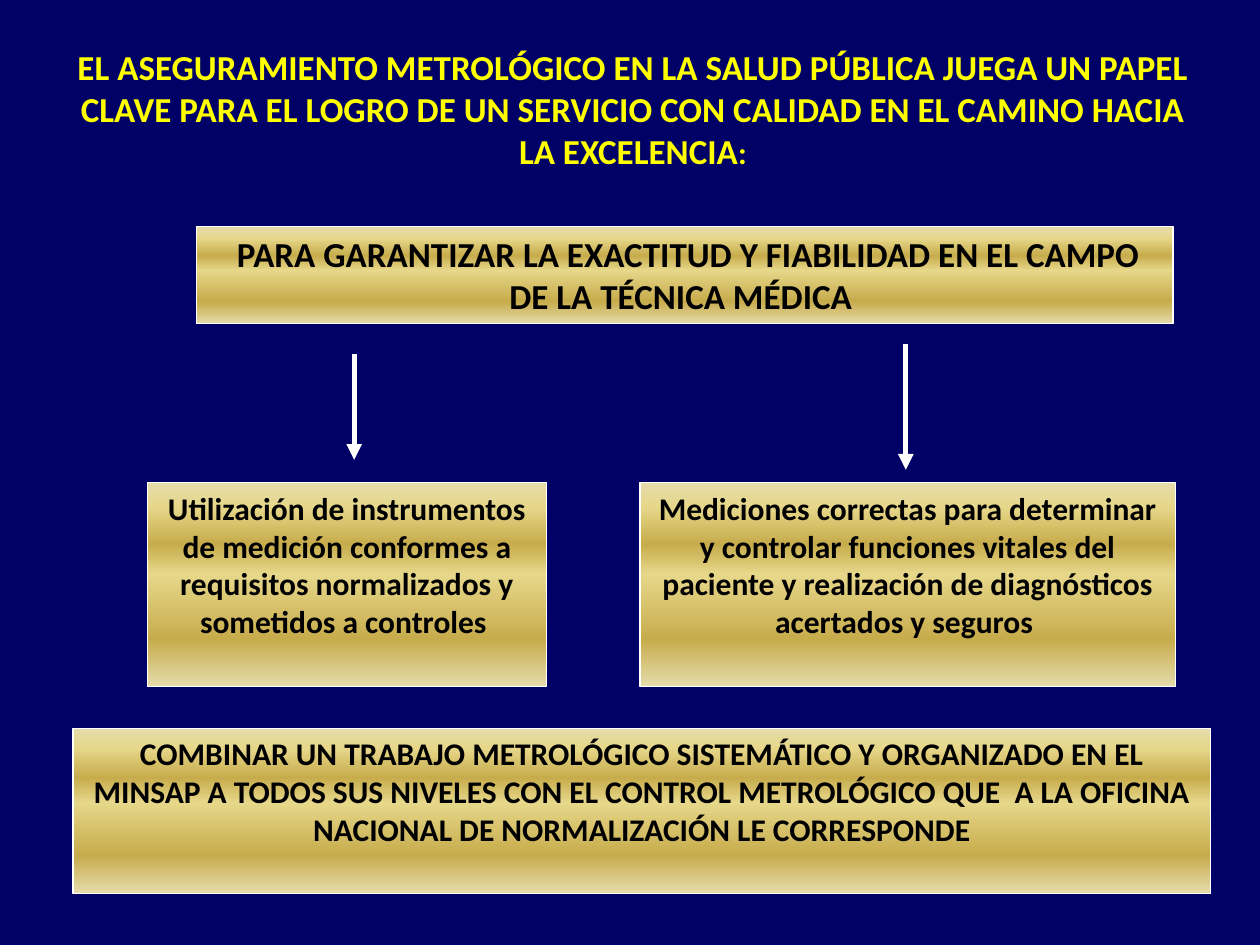
from pptx import Presentation, util as u
from pptx.dml.color import RGBColor
from pptx.enum import shapes, text
from pptx.oxml import parse_xml
from pptx.oxml.ns import nsdecls, qn
from lxml import etree

THEME = {
    "font": "Calibri", "big": 20, "mid": 18,
    "back": "000066", "head": "FFFF00", "ink": "000000", "line": "FFFFFF",
    "edge": 0.75, "arrow": 3,
    "gold": [(0, "E6DCAC"), (12, "E6D78A"), (30, "C7AC4C"),
             (45, "E6D78A"), (77, "C7AC4C"), (100, "E6DCAC")],
}

TITLE = ((1.19, 0.79, 23.14, 2.82), [
    ("EL ASEGURAMIENTO METROLÓGICO EN LA SALUD PÚBLICA JUEGA UN PAPEL CLAVE "
     "PARA EL LOGRO DE UN SERVICIO CON CALIDAD EN EL CAMINO HACIA LA EXCELENCIA",
     "big", True),
    (":", "mid", True)])

BOXES = [
    ((3.96, 4.57, 19.69, 1.96), [
        (" ", "mid", False),
        ("PARA GARANTIZAR LA EXACTITUD Y FIABILIDAD EN EL CAMPO "
         "DE LA TÉCNICA MÉDICA ", "big", True)]),
    ((2.97, 9.73, 8.05, 4.11), [
        ("Utilización de instrumentos de medición conformes a requisitos "
         "normalizados y sometidos a controles ", "mid", True)]),
    ((12.9, 9.73, 10.8, 4.11), [
        ("Mediciones correctas para determinar y controlar funciones vitales "
         "del paciente y realización de diagnósticos acertados y seguros ",
         "mid", True)]),
    ((1.47, 14.68, 22.94, 3.33), [
        ("COMBINAR UN TRABAJO METROLÓGICO SISTEMÁTICO Y ORGANIZADO EN EL MINSAP "
         "A TODOS SUS NIVELES CON EL CONTROL METROLÓGICO QUE  A LA OFICINA "
         "NACIONAL DE NORMALIZACIÓN LE CORRESPONDE", "mid", True)]),
]

ARROWS = [(7.14, 7.14, 9.27), (18.26, 6.93, 9.47)]


def color(name):
    return RGBColor.from_string(THEME[name])


def write(shape, runs, ink):
    frame = shape.text_frame
    frame.word_wrap = True
    frame.vertical_anchor = text.MSO_ANCHOR.TOP
    para = frame.paragraphs[0]
    para.alignment = text.PP_ALIGN.CENTER
    for words, size, bold in runs:
        run = para.add_run()
        run.text = words
        font = run.font
        font.name, font.size, font.bold = THEME["font"], u.Pt(THEME[size]), bold
        font.color.rgb = color(ink)


def gild(shape):
    shape.fill.gradient()
    shape.fill.gradient_angle = 270
    stops = shape._element.spPr.find(qn("a:gradFill")).find(qn("a:gsLst"))
    for stop in list(stops):
        stops.remove(stop)
    for place, tone in THEME["gold"]:
        stops.append(parse_xml(
            f'<a:gs {nsdecls("a")} pos="{place * 1000}">'
            f'<a:srgbClr val="{tone}"/></a:gs>'))


def add_box(slide, area, runs):
    box = slide.shapes.add_shape(shapes.MSO_SHAPE.RECTANGLE, *map(u.Cm, area))
    box.shadow.inherit = False
    gild(box)
    box.line.color.rgb = color("line")
    box.line.width = u.Pt(THEME["edge"])
    write(box, runs, "ink")


def add_arrow(slide, x, top, end):
    arrow = slide.shapes.add_connector(
        shapes.MSO_CONNECTOR.STRAIGHT, *map(u.Cm, (x, top, x, end)))
    arrow.line.color.rgb = color("line")
    arrow.line.width = u.Pt(THEME["arrow"])
    etree.SubElement(arrow.line._get_or_add_ln(), qn("a:tailEnd"), type="triangle")
    etree.SubElement(arrow._element.spPr, qn("a:effectLst"))


def main():
    """Build the slide on metrology in public health and save it."""
    deck = Presentation()
    deck.slide_width, deck.slide_height = u.Cm(25.4), u.Cm(19.05)
    slide = deck.slides.add_slide(deck.slide_layouts[6])
    slide.background.fill.solid()
    slide.background.fill.fore_color.rgb = color("back")
    area, runs = TITLE
    write(slide.shapes.add_textbox(*map(u.Cm, area)), runs, "head")
    for area, runs in BOXES:
        add_box(slide, area, runs)
    for spot in ARROWS:
        add_arrow(slide, *spot)
    deck.save("out.pptx")


if __name__ == "__main__":
    main()
